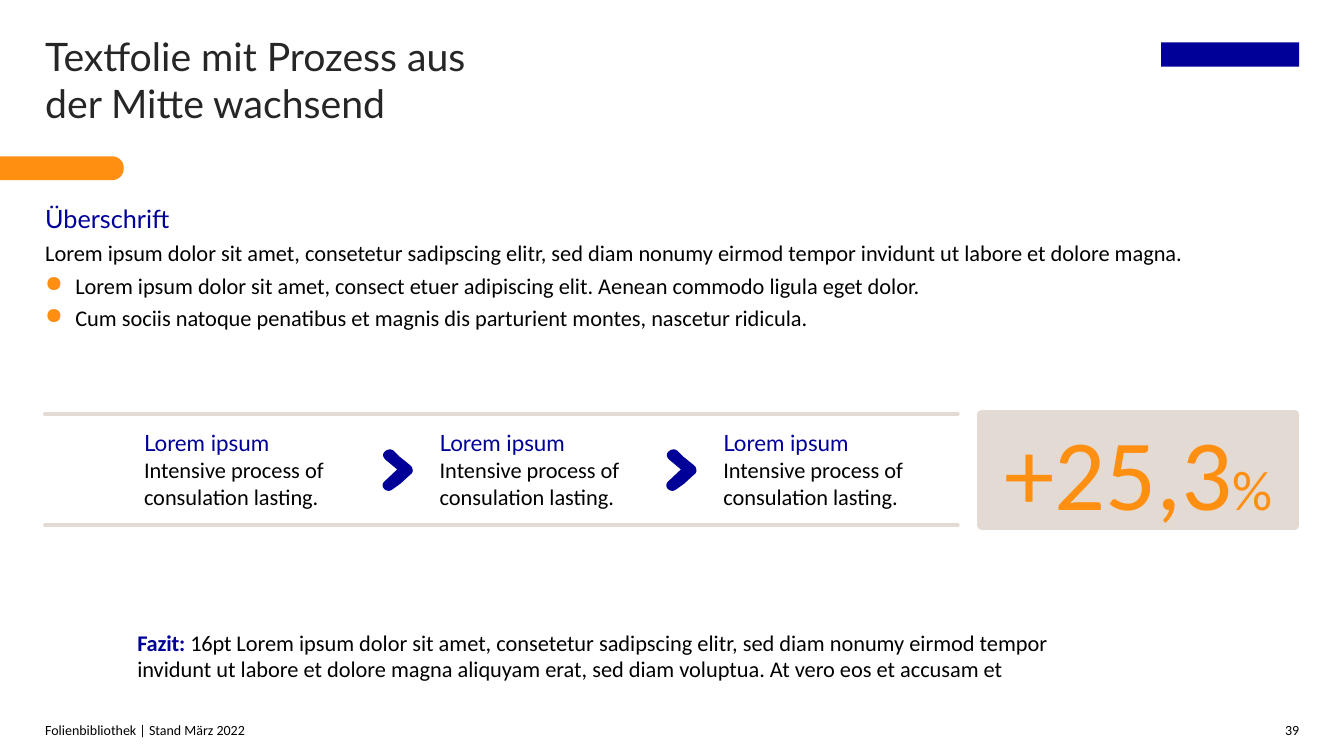
from dataclasses import dataclass

from lxml import etree
from pptx import Presentation
from pptx import util as u
from pptx.dml.color import RGBColor
from pptx.enum import shapes, text
from pptx.oxml import ns


@dataclass(frozen=True)
class Theme:
    """Colours, fonts and type sizes of the slide."""
    blue: str = "000099"
    orange: str = "FE8F11"
    sand: str = "E4DAD4"
    ink: str = "262626"
    black: str = "000000"
    heading: str = "Lato"
    body: str = "Calibri"
    title_size: int = 28
    subtitle_size: int = 18
    text_size: int = 16
    footer_size: int = 10
    figure_size: int = 72
    unit_size: int = 40


@dataclass(frozen=True)
class Ink:
    """Look of one run of text."""
    font: str
    size: int
    colour: str
    bold: bool = False
    spacing: int = 0


def add_element(parent, tag, **attributes):
    """Append a DrawingML element to a parent."""
    return etree.SubElement(parent, ns.qn(tag), attributes)


def curve_points(start, controls, steps=8):
    """Return points along a cubic curve after its start."""
    points = (start, *controls)
    result = []
    for step in range(1, steps + 1):
        t = step / steps
        weights = ((1 - t) ** 3, 3 * t * (1 - t) ** 2, 3 * t * t * (1 - t), t ** 3)
        result.append(tuple(sum(w * p[axis] for w, p in zip(weights, points)) for axis in (0, 1)))
    return result


class SlideBuilder:
    """Draws styled elements on the current slide."""

    def __init__(self, slide, theme):
        """Keep the slide and its theme."""
        self.slide = slide
        self.theme = theme

    def add_runs(self, paragraph, runs):
        """Add runs, turning newlines into line breaks."""
        for content, ink in runs:
            for index, line in enumerate(content.split("\n")):
                if index:
                    paragraph.add_line_break()
                if not line:
                    continue
                run = paragraph.add_run()
                run.text = line
                run.font.name = ink.font
                run.font.size = u.Pt(ink.size)
                run.font.bold = ink.bold
                run.font.color.rgb = RGBColor.from_string(ink.colour)
                if ink.spacing:
                    run._r.get_or_add_rPr().set("spc", str(ink.spacing))

    def fill_frame(self, shape, paragraphs, anchor, align, after, insets):
        """Set up a text frame and fill in its paragraphs."""
        frame = shape.text_frame
        frame.word_wrap = True
        frame.vertical_anchor = anchor
        frame.margin_left, frame.margin_right = (u.Cm(inset) for inset in insets)
        frame.margin_top = frame.margin_bottom = 0
        for index, runs in enumerate(paragraphs):
            paragraph = frame.add_paragraph() if index else frame.paragraphs[0]
            paragraph.alignment = align
            paragraph.space_after = u.Pt(after)
            self.add_runs(paragraph, runs)
        return frame

    def text_box(self, box, paragraphs, anchor=text.MSO_ANCHOR.TOP,
                 align=text.PP_ALIGN.LEFT, after=0, insets=(0, 0)):
        """Add a text box."""
        shape = self.slide.shapes.add_textbox(*map(u.Cm, box))
        return self.fill_frame(shape, paragraphs, anchor, align, after, insets)

    def bullet(self, paragraph):
        """Give a paragraph an orange dot and a hanging indent."""
        properties = paragraph._p.get_or_add_pPr()
        properties.set("marL", str(u.Cm(0.76)))
        properties.set("indent", str(u.Cm(-0.76)))
        colour = add_element(properties, "a:buClr")
        add_element(colour, "a:srgbClr", val=self.theme.orange)
        add_element(properties, "a:buChar", char="●")

    def paint(self, shape, colour):
        """Fill a shape and remove its outline and shadow."""
        shape.shadow.inherit = False
        shape.fill.solid()
        shape.fill.fore_color.rgb = RGBColor.from_string(colour)
        shape.line.fill.background()

    def rectangle(self, box, colour):
        """Add a plain rectangle."""
        shape = self.slide.shapes.add_shape(shapes.MSO_SHAPE.RECTANGLE, *map(u.Cm, box))
        self.paint(shape, colour)
        return shape

    def figure(self, box, runs):
        """Add a panel with a large figure and softly joined edges."""
        shape = self.rectangle(box, self.theme.sand)
        shape.line.color.rgb = RGBColor.from_string(self.theme.sand)
        shape.line.width = u.Pt(6)
        add_element(shape.line._get_or_add_ln(), "a:round")
        self.fill_frame(shape, [runs], text.MSO_ANCHOR.MIDDLE, text.PP_ALIGN.CENTER, 4, (0, 0))

    def outline(self, left, top, start, segments, colour):
        """Add a filled outline of straight and curved segments."""
        points = [start]
        for segment in segments:
            points += segment if len(segment) == 1 else curve_points(points[-1], segment)
        places = [(u.Cm(left + x), u.Cm(top + y)) for x, y in points]
        builder = self.slide.shapes.build_freeform(*places[0])
        builder.add_line_segments(places[1:], close=True)
        self.paint(builder.convert_to_shape(), colour)

    def rule(self, left, right, y):
        """Add a horizontal rule with round ends."""
        connector = self.slide.shapes.add_connector(
            shapes.MSO_CONNECTOR.STRAIGHT, u.Cm(left), u.Cm(y), u.Cm(right), u.Cm(y))
        connector.line.color.rgb = RGBColor.from_string(self.theme.sand)
        connector.line.width = u.Pt(3)
        connector.line._get_or_add_ln().set("cap", "rnd")
        add_element(connector._element.spPr, "a:effectLst")


TAB = [((2.82, 0),), ((3, 0), (3.12, 0.13), (3.12, 0.3)),
       ((3.12, 0.47), (3, 0.6), (2.82, 0.6)), ((0, 0.6),)]
CHEVRON = [((0.76, 0.46), (0.71, 0.43), (0.69, 0.41)), ((0.43, 0.2),), ((0.28, 0.05),),
           ((0.2, 0), (0.1, 0.03), (0.05, 0.1)), ((0, 0.15), (0.03, 0.23), (0.08, 0.28)),
           ((0.38, 0.53),), ((0.05, 0.84),),
           ((0, 0.89), (0, 0.97), (0.05, 1.02)), ((0.1, 1.07), (0.18, 1.09), (0.25, 1.04)),
           ((0.46, 0.89),), ((0.71, 0.66),), ((0.76, 0.64), (0.79, 0.56), (0.76, 0.51))]


def main():
    """Build and save the process slide."""
    presentation = Presentation()
    presentation.slide_width, presentation.slide_height = u.Cm(33.87), u.Cm(19.05)
    slide = presentation.slides.add_slide(presentation.slide_layouts[6])
    theme = Theme()
    builder = SlideBuilder(slide, theme)
    title = Ink(theme.heading, theme.title_size, theme.ink)
    subtitle = Ink(theme.heading, theme.subtitle_size, theme.blue)
    step_title = Ink(theme.heading, theme.text_size, theme.blue)
    body = Ink(theme.body, theme.text_size, theme.black)
    footer = Ink(theme.body, theme.footer_size, theme.black)
    margin, band_top, band_height, pitch = 1.14, 10.44, 2.8, 7.15
    middle, bottom = text.MSO_ANCHOR.MIDDLE, text.MSO_ANCHOR.BOTTOM

    builder.outline(0, 3.94, (0, 0), TAB, theme.orange)
    builder.rectangle((29.26, 1.07, 3.48, 0.61), theme.blue)
    builder.text_box((margin, 0.81, 24.41, 1.4),
                     [[("Textfolie mit Prozess aus\nder Mitte wachsend", title)]])
    builder.text_box((margin, 18.19, 28.09, 0.41),
                     [[("Folienbibliothek | Stand März 2022", footer)]], bottom)
    builder.text_box((31.95, 18.19, 0.79, 0.41), [[("39", footer)]], bottom, text.PP_ALIGN.RIGHT)

    intro = builder.text_box((margin, 5.13, 31.6, 4.7), [
        [("Überschrift", subtitle)],
        [("Lorem ipsum dolor sit amet, consetetur sadipscing elitr, sed diam nonumy "
          "eirmod tempor invidunt ut labore et dolore magna.", body)],
        [("Lorem ipsum dolor sit amet, consect etuer adipiscing elit. "
          "Aenean commodo ligula eget dolor.", body)],
        [("Cum sociis natoque penatibus et magnis dis parturient montes, "
          "nascetur ridicula.", body)],
    ], after=4)
    for paragraph in intro.paragraphs[2:]:
        builder.bullet(paragraph)

    for step in range(3):
        builder.text_box((3.63 + step * pitch, band_top, 7.01, band_height),
                         [[("Lorem ipsum\n", step_title),
                           ("Intensive process of\nconsulation lasting.", body)]],
                         middle, insets=(0.3 if step else 0, 0.2))
    for gap in range(2):
        builder.outline(9.63 + gap * pitch, 11.3, (0.76, 0.51), CHEVRON, theme.blue)
    for y in (band_top, band_top + band_height):
        builder.rule(margin, 24.13, y)
    builder.figure((24.74, band_top, 7.9, band_height), [
        ("+25,3", Ink(theme.body, theme.figure_size, theme.orange)),
        ("%", Ink(theme.body, theme.unit_size, theme.orange))])

    builder.text_box((3.46, 15.62, 29.28, 1.8), [[
        ("Fazit: ", Ink(theme.body, theme.text_size, theme.blue, True, -10)),
        ("16pt ", Ink(theme.body, theme.text_size, theme.black, False, -10)),
        ("Lorem ipsum dolor sit amet, consetetur sadipscing elitr, sed diam nonumy eirmod tempor\n"
         "invidunt ut labore et dolore magna aliquyam erat, sed diam voluptua. "
         "At vero eos et accusam et", body)]], middle, after=6)
    presentation.save("out.pptx")


if __name__ == "__main__":
    main()
